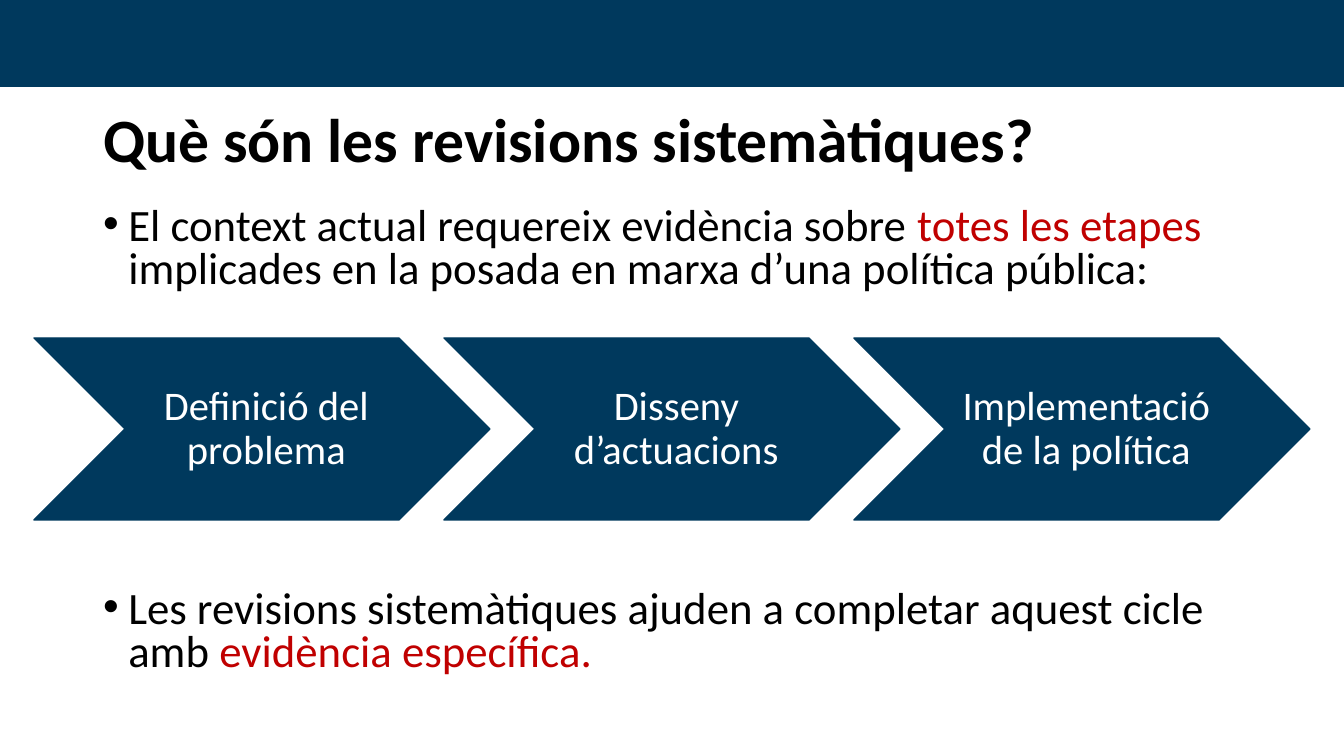
from pptx import Presentation
from pptx import util as u
from pptx.dml.color import RGBColor
from pptx.enum import shapes, text

NAVY = RGBColor(0x00, 0x39, 0x5D)
RED = RGBColor(0xC0, 0x00, 0x00)
BLACK = RGBColor(0x00, 0x00, 0x00)
WHITE = RGBColor(0xFF, 0xFF, 0xFF)


def px(n):
    return u.Emu(round(n * 914400 / 100.8))


class Deck:
    font = "Calibri"

    def __init__(self, wide, high):
        self.prs = Presentation()
        self.prs.slide_width, self.prs.slide_height = px(wide), px(high)
        self.slide = self.prs.slides.add_slide(self.prs.slide_layouts[1])

    def place(self, item, box):
        item.left, item.top, item.width, item.height = map(px, box)
        frame = item.text_frame
        frame.word_wrap = True
        frame.auto_size = text.MSO_AUTO_SIZE.NONE
        return frame

    def fill(self, para, runs, size, space, align, bold=False):
        para.alignment = align
        para.line_spacing = space
        for words, color in runs:
            run = para.add_run()
            run.text = words
            run.font.name = self.font
            run.font.size = u.Pt(size)
            run.font.bold = bold
            run.font.color.rgb = color

    def title(self, box, words):
        frame = self.place(self.slide.shapes.title, box)
        frame.vertical_anchor = text.MSO_ANCHOR.MIDDLE
        self.fill(frame.paragraphs[0], [(words, BLACK)], 44, 0.9,
                  text.PP_ALIGN.LEFT, True)

    def list(self, box, items, gap):
        frame = self.place(self.slide.placeholders[1], box)
        for i, runs in enumerate(items):
            para = frame.add_paragraph() if i else frame.paragraphs[0]
            props = para._p.get_or_add_pPr()
            props.set("marL", str(u.Inches(0.25)))
            props.set("indent", str(-u.Inches(0.25)))
            para.space_before = u.Pt(gap if i else 0)
            self.fill(para, runs, 32, 0.8, text.PP_ALIGN.LEFT)

    def shape(self, kind, box):
        item = self.slide.shapes.add_shape(kind, *map(px, box))
        item.shadow.inherit = False
        item.fill.solid()
        item.fill.fore_color.rgb = NAVY
        item.line.color.rgb = NAVY
        item.line.width = u.Pt(1)
        return item

    def step(self, box, words):
        item = self.shape(shapes.MSO_SHAPE.CHEVRON, box)
        frame = self.place(item, box)
        frame.vertical_anchor = text.MSO_ANCHOR.MIDDLE
        frame.margin_left = px(13)
        frame.margin_right = frame.margin_top = frame.margin_bottom = px(4)
        self.fill(frame.paragraphs[0], [(words, WHITE)], 29, 0.9,
                  text.PP_ALIGN.CENTER)


def main():
    deck = Deck(1344, 756)

    # Top band
    deck.shape(shapes.MSO_SHAPE.RECTANGLE, (0, 0, 1344, 86))

    # Title and list, with room for the steps between the two items
    deck.title((93, 89, 1159, 107), "Què són les revisions sistemàtiques?")
    deck.list((93, 202, 1159, 488), [
        [("El context actual requereix evidència sobre ", BLACK),
         ("totes les etapes", RED),
         (" implicades en la posada en marxa d’una política pública:", BLACK)],
        [("Les revisions sistemàtiques ajuden a completar aquest cicle amb ",
          BLACK),
         ("evidència específica.", RED)],
    ], gap=212)

    # Policy steps
    steps = ["Definició del problema", "Disseny d’actuacions",
             "Implementació de la política"]
    for i, words in enumerate(steps):
        deck.step((34 + 410 * i, 338, 456, 182), words)

    deck.prs.save("out.pptx")


if __name__ == "__main__":
    main()
